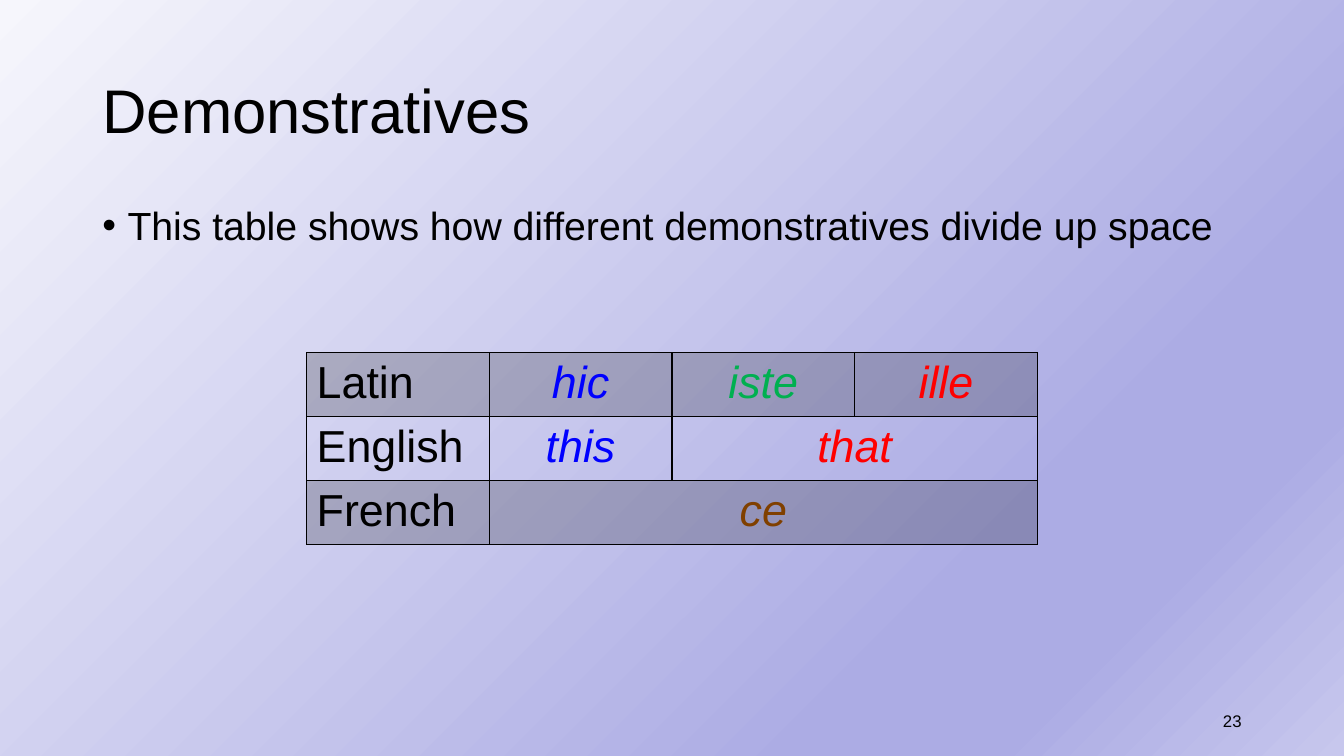
from lxml import etree
from pptx import Presentation, util as u
from pptx.dml import color
from pptx.enum import text
from pptx.oxml import ns

COLUMNS, ROWS = 160, 90
BLACK, BLUE, GREEN, RED, BROWN = "000000", "0000FF", "00B050", "FF0000", "804000"


def rgb(hex_code):
    return color.RGBColor.from_string(hex_code)


def add_xml(parent, tag, **attributes):
    return etree.SubElement(parent, ns.qn(tag), **attributes)


class Deck:
    """Holds the style and the current slide, measured on a 160 x 90 grid."""
    font = "Arial"

    def __init__(self):
        self.deck = Presentation()
        self.deck.slide_width, self.deck.slide_height = u.Inches(13.333), u.Inches(7.5)
        self.slide = self.deck.slides.add_slide(self.deck.slide_layouts[5])

    def box(self, column, row, width, height):
        across = self.deck.slide_width / COLUMNS
        down = self.deck.slide_height / ROWS
        return [round(column * across), round(row * down),
                round(width * across), round(height * down)]

    def background(self, stops, angle):
        fill = self.slide.background.fill
        fill.gradient()
        fill.gradient_angle = 360 - angle
        stop_list = self.slide.element.find(".//" + ns.qn("a:gsLst"))
        for default_stop in list(stop_list):
            stop_list.remove(default_stop)
        for percent, hex_code in stops:
            stop = add_xml(stop_list, "a:gs", pos=str(percent * 1000))
            add_xml(stop, "a:srgbClr", val=hex_code)

    def add_words(self, frame, words, size, hex_code=BLACK, align="LEFT", italic=False):
        paragraph = frame.paragraphs[0]
        paragraph.alignment = text.PP_ALIGN[align]
        run = paragraph.add_run()
        run.text = words
        run.font.name, run.font.size = self.font, u.Pt(size)
        run.font.italic = italic
        run.font.color.rgb = rgb(hex_code)
        return paragraph

    def title(self, words, area):
        heading = self.slide.shapes.title
        heading.left, heading.top, heading.width, heading.height = self.box(*area)
        frame = heading.text_frame
        frame.auto_size = text.MSO_AUTO_SIZE.NONE
        frame.vertical_anchor = text.MSO_ANCHOR.MIDDLE
        self.add_words(frame, words, 44).line_spacing = 0.9

    def text_box(self, words, area, size, align="LEFT", anchor="TOP"):
        frame = self.slide.shapes.add_textbox(*self.box(*area)).text_frame
        frame.word_wrap = True
        frame.vertical_anchor = text.MSO_ANCHOR[anchor]
        return self.add_words(frame, words, size, align=align)

    def bullet(self, words, area):
        paragraph = self.text_box(words, area, 28)
        paragraph.line_spacing, paragraph.space_before = 0.9, u.Pt(10)
        properties = paragraph._p.get_or_add_pPr()
        indent = u.Inches(0.25)
        properties.set("marL", str(indent))
        properties.set("indent", str(-indent))
        add_xml(properties, "a:buFont", typeface=self.font)
        add_xml(properties, "a:buChar", char="•")

    def style_cell(self, cell, shaded):
        properties = cell._tc.get_or_add_tcPr()
        for side in "LRTB":
            line = add_xml(properties, f"a:ln{side}", w=str(u.Pt(1)))
            add_xml(add_xml(line, "a:solidFill"), "a:srgbClr", val=BLACK)
        if shaded:
            shade = add_xml(add_xml(properties, "a:solidFill"), "a:srgbClr", val=BLACK)
            add_xml(shade, "a:alpha", val="20000")
        else:
            add_xml(properties, "a:noFill")

    def table(self, languages, area):
        column_count = 4
        table = self.slide.shapes.add_table(
            len(languages), column_count, *self.box(*area)).table
        table.first_row = table.horz_banding = False
        for row, (language, words) in enumerate(languages):
            for column in range(column_count):
                self.style_cell(table.cell(row, column), shaded=row % 2 == 0)
            self.add_words(table.cell(row, 0).text_frame, language, 32)
            # The last word of each language covers the remaining columns
            last = len(words)
            if last < column_count - 1:
                table.cell(row, last).merge(table.cell(row, column_count - 1))
            for column, (word, hex_code) in enumerate(words, start=1):
                self.add_words(table.cell(row, column).text_frame, word, 32,
                               hex_code, "CENTER", italic=True)


def main():
    lesson = Deck()
    lesson.background([(0, "F6F6FC"), (74, "ACACE4"), (83, "ACACE4"), (100, "C7C7ED")], 45)

    # Heading and introduction
    lesson.title("Demonstratives", (11, 4.8, 138, 17.4))
    lesson.bullet("This table shows how different demonstratives divide up space",
                  (11, 24, 138, 11.5))

    # Demonstratives by language, from near to far
    lesson.table([
        ("Latin", [("hic", BLUE), ("iste", GREEN), ("ille", RED)]),
        ("English", [("this", BLUE), ("that", RED)]),
        ("French", [("ce", BROWN)]),
    ], (36.5, 42, 87, 21.6))

    # Slide number
    lesson.text_box("23", (113, 83.4, 36, 4.8), 12, "RIGHT", "MIDDLE")
    lesson.deck.save("out.pptx")


if __name__ == "__main__":
    main()
